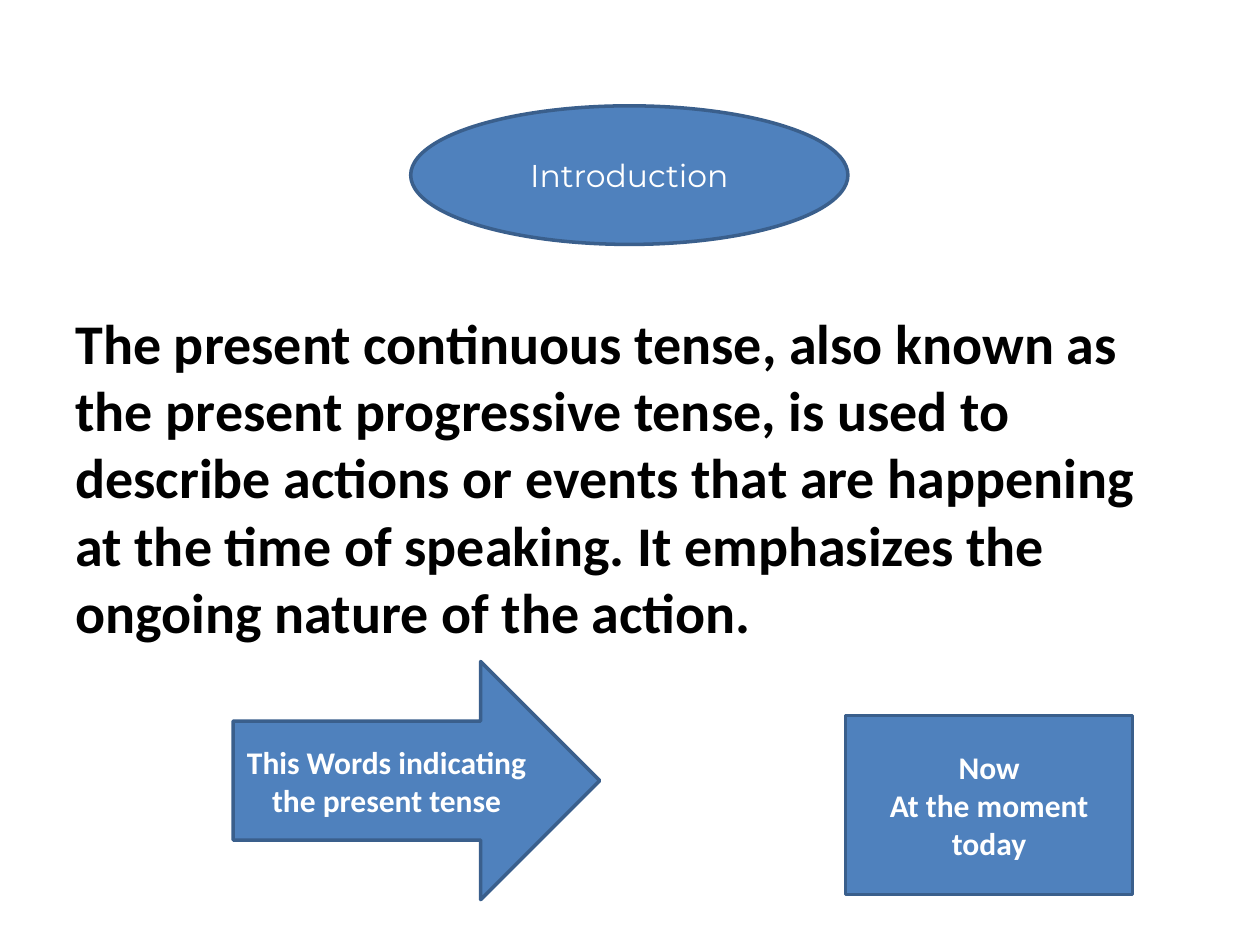
from pptx import Presentation
from pptx.dml.color import RGBColor
from pptx.enum.shapes import MSO_SHAPE as Shape
from pptx.enum.text import MSO_ANCHOR as Anchor, PP_ALIGN as Align
from pptx.util import Inches, Pt

BLUE = RGBColor(0x4F, 0x81, 0xBD)
DARK_BLUE = RGBColor(0x3A, 0x5F, 0x8C)
WHITE = RGBColor(0xFF, 0xFF, 0xFF)
BLACK = RGBColor(0, 0, 0)

DEFINITION = (
    "The present continuous tense, also known as the present progressive tense, "
    "is used to describe actions or events that are happening at the time of "
    "speaking. It emphasizes the ongoing nature of the action."
)


def format_text(text_frame, size, color, font_name, bold, alignment):
    text_frame.word_wrap = True
    for paragraph in text_frame.paragraphs:
        paragraph.alignment = alignment
        for run in paragraph.runs:
            run.font.size = Pt(size)
            run.font.name = font_name
            run.font.bold = bold
            run.font.color.rgb = color


def add_body(slide, text, left, top, width, height):
    box = slide.shapes.add_textbox(
        Inches(left), Inches(top), Inches(width), Inches(height)
    )
    box.text_frame.text = text
    format_text(box.text_frame, 32, BLACK, "Calibri", True, Align.LEFT)


def add_label(slide, kind, text, left, top, width, height,
              font_name="Calibri", bold=True):
    shape = slide.shapes.add_shape(
        kind, Inches(left), Inches(top), Inches(width), Inches(height)
    )
    shape.shadow.inherit = False
    shape.fill.solid()
    shape.fill.fore_color.rgb = BLUE
    shape.line.color.rgb = DARK_BLUE
    shape.line.width = Pt(2)
    shape.text_frame.text = text
    shape.text_frame.vertical_anchor = Anchor.MIDDLE
    format_text(shape.text_frame, 18, WHITE, font_name, bold, Align.CENTER)


def main():
    presentation = Presentation()
    presentation.slide_width = Inches(10)
    presentation.slide_height = Inches(7.5)
    slide = presentation.slides.add_slide(presentation.slide_layouts[6])

    add_body(slide, DEFINITION, 0.5, 2.4, 9, 2.8)
    add_label(slide, Shape.OVAL, "Introduction", 3.26, 0.84, 3.47, 1.1,
              font_name="Montserrat", bold=False)
    add_label(slide, Shape.RECTANGLE, "Now\nAt the moment\ntoday",
              6.71, 5.68, 2.28, 1.42)
    add_label(slide, Shape.RIGHT_ARROW, "This Words indicating the present tense",
              1.85, 5.25, 2.91, 1.89)

    presentation.save("out.pptx")


if __name__ == "__main__":
    main()
